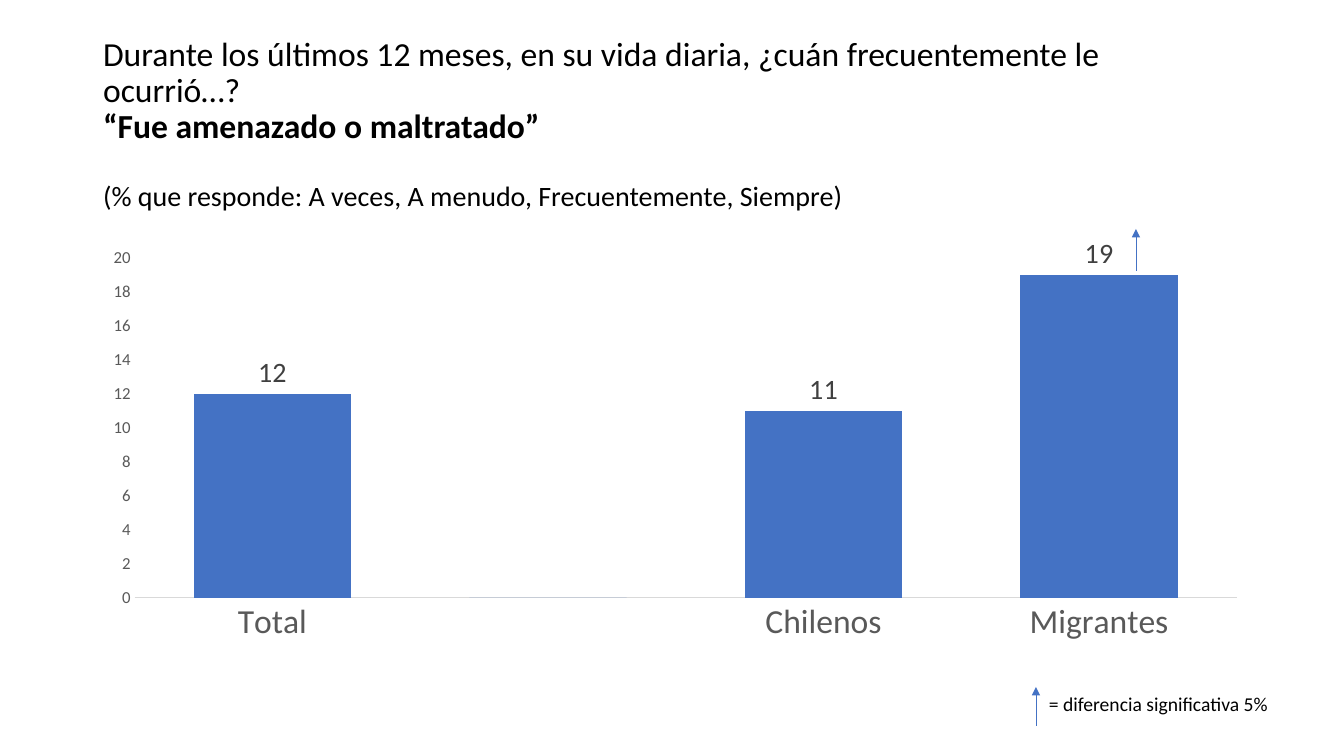
from lxml import etree
from pptx import Presentation
from pptx.chart.data import CategoryChartData
from pptx.dml.color import RGBColor
from pptx.enum.chart import XL_CHART_TYPE, XL_LABEL_POSITION, XL_TICK_MARK
from pptx.enum.shapes import MSO_CONNECTOR
from pptx.enum.text import MSO_ANCHOR, MSO_AUTO_SIZE, PP_ALIGN
from pptx.oxml import parse_xml
from pptx.oxml.ns import nsdecls, qn
from pptx.util import Pt

COLUMN_CLUSTERED = XL_CHART_TYPE.COLUMN_CLUSTERED
OUTSIDE_END = XL_LABEL_POSITION.OUTSIDE_END
NO_TICKS = XL_TICK_MARK.NONE
STRAIGHT = MSO_CONNECTOR.STRAIGHT
MIDDLE = MSO_ANCHOR.MIDDLE
NO_AUTOFIT = MSO_AUTO_SIZE.NONE
GROW_TO_TEXT = MSO_AUTO_SIZE.SHAPE_TO_FIT_TEXT
LEFT = PP_ALIGN.LEFT

EMU_PER_PX = 914400 / 100.8
TITLE_ONLY = 5
FONT = "Calibri"
COLORS = {
    "text": "000000",
    "bar": "4472C4",
    "axis_text": "595959",
    "axis_line": "D9D9D9",
    "label": "404040",
}
QUESTION = [
    # text, size, bold, space before
    ("Durante los últimos 12 meses, en su vida diaria, ¿cuán frecuentemente le ocurrió…?", 24, False, 0),
    ("“Fue amenazado o maltratado”", 24, True, 0),
    ("(% que responde: A veces, A menudo, Frecuentemente, Siempre)", 20, False, 26),
]
GROUPS = ["Total", " ", "Chilenos", "Migrantes"]
PERCENTAGES = [12, 0, 11, 19]
SPACER = 1
PLOT_AREA = {"x": 0.036, "y": 0.065, "w": 0.951, "h": 0.76}


def px(*lengths):
    return [round(length * EMU_PER_PX) for length in lengths]


def rgb(name):
    return RGBColor.from_string(COLORS[name])


def style_font(font, size, color, bold=False):
    font.name = FONT
    font.size = Pt(size)
    font.bold = bold
    font.color.rgb = rgb(color)


def add_question(slide):
    title = slide.shapes.title
    title.left, title.top, title.width, title.height = px(93, 21, 1121, 208)
    frame = title.text_frame
    frame.word_wrap = True
    frame.auto_size = NO_AUTOFIT
    frame.vertical_anchor = MIDDLE
    frame.text = "\n".join(line[0] for line in QUESTION)
    for paragraph, (_, size, bold, gap) in zip(frame.paragraphs, QUESTION):
        paragraph.alignment = LEFT
        paragraph.line_spacing = 0.9
        paragraph.space_before = Pt(gap)
        style_font(paragraph.font, size, "text", bold)


def fix_plot_area(chart):
    """Place the inner plot area by fractions of the chart."""
    plot_area = chart.plots[0]._element.getparent()
    for old_layout in plot_area.findall(qn("c:layout")):
        plot_area.remove(old_layout)
    layout = parse_xml(f"<c:layout {nsdecls('c')}/>")
    manual = etree.SubElement(layout, qn("c:manualLayout"))
    settings = {"layoutTarget": "inner", "xMode": "edge", "yMode": "edge", **PLOT_AREA}
    for tag, value in settings.items():
        etree.SubElement(manual, qn(f"c:{tag}")).set("val", str(value))
    plot_area.insert(0, layout)


def hide_label(labels, index):
    labels._element.insert(0, parse_xml(
        f'<c:dLbl {nsdecls("c")}><c:idx val="{index}"/><c:delete val="1"/></c:dLbl>'))


def style_axis(axis, size):
    axis.major_tick_mark = axis.minor_tick_mark = NO_TICKS
    axis.has_major_gridlines = False
    style_font(axis.tick_labels.font, size, "axis_text")


def add_percentage_chart(slide):
    data = CategoryChartData(number_format="0")
    data.categories = GROUPS
    data.add_series("Series 1", PERCENTAGES)
    chart = slide.shapes.add_chart(COLUMN_CLUSTERED, *px(93, 229, 1159, 447), data).chart
    chart.has_title = chart.has_legend = False
    style_font(chart.font, 10, "text")

    style_axis(chart.category_axis, 24)
    axis_line = chart.category_axis.format.line
    axis_line.color.rgb = rgb("axis_line")
    axis_line.width = Pt(0.75)

    percent_axis = chart.value_axis
    style_axis(percent_axis, 12)
    percent_axis.format.line.fill.background()
    percent_axis.minimum_scale, percent_axis.maximum_scale = 0, 20
    percent_axis.major_unit = 2

    plot = chart.plots[0]
    plot.gap_width = 75
    plot.vary_by_categories = False
    bars = plot.series[0]
    bars.format.fill.solid()
    bars.format.fill.fore_color.rgb = rgb("bar")
    labels = bars.data_labels
    labels.show_value = True
    labels.position = OUTSIDE_END
    style_font(labels.font, 20, "label")
    hide_label(labels, SPACER)
    fix_plot_area(chart)


def add_up_arrow(slide, x, bottom, top):
    arrow = slide.shapes.add_connector(STRAIGHT, *px(x, bottom, x, top))
    arrow.line.color.rgb = rgb("bar")
    arrow.line.width = Pt(0.5)
    etree.SubElement(arrow.line._get_or_add_ln(), qn("a:tailEnd")).set("type", "triangle")
    etree.SubElement(arrow._element.spPr, qn("a:effectLst"))


def add_note(slide, text):
    frame = slide.shapes.add_textbox(*px(1039, 687, 242, 34)).text_frame
    frame.word_wrap = False
    frame.auto_size = GROW_TO_TEXT
    frame.text = text
    style_font(frame.paragraphs[0].font, 14, "text")


def main():
    deck = Presentation()
    deck.slide_width, deck.slide_height = px(1344, 756)
    slide = deck.slides.add_slide(deck.slide_layouts[TITLE_ONLY])
    add_question(slide)
    add_percentage_chart(slide)
    add_up_arrow(slide, 1136, 271, 229)
    add_up_arrow(slide, 1036, 726, 687)
    add_note(slide, "= diferencia significativa 5%")
    deck.save("out.pptx")


if __name__ == "__main__":
    main()
